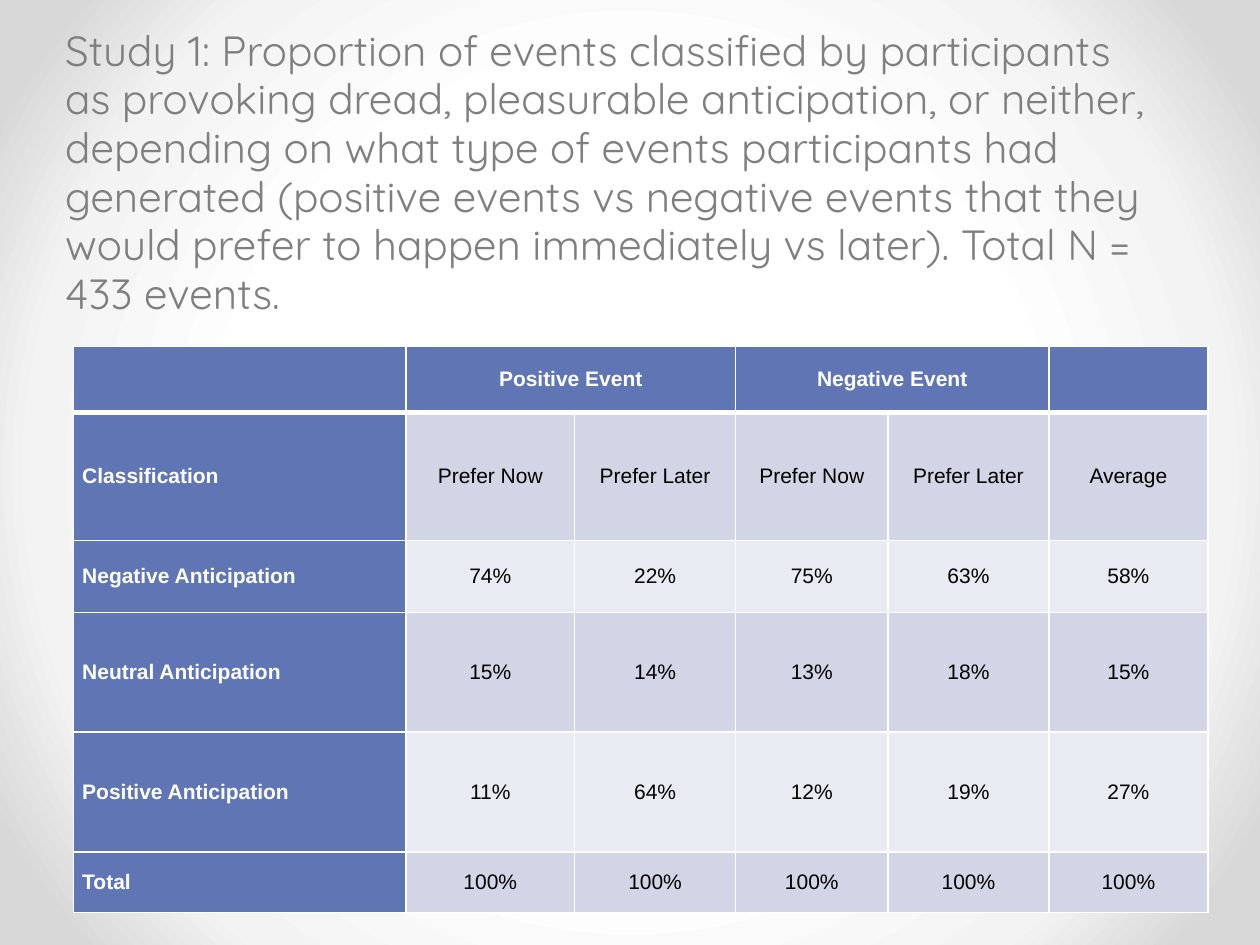
import pptx
import pptx.util
import pptx.dml.color
import pptx.enum.text
import pptx.oxml
import pptx.oxml.ns

Pt = pptx.util.Pt
Align = pptx.enum.text.PP_ALIGN
Anchor = pptx.enum.text.MSO_ANCHOR
SPACE = pptx.oxml.ns.nsdecls("a")

BLUE, DARK, LIGHT, WHITE = "6076B4", "D1D5E5", "E9EBF2", "FFFFFF"
STOPS = [(0, WHITE), (50, WHITE), (76, "F3F3F3"), (92, "D8D8D8"), (100, "D8D8D8")]
TITLE = (
    "Study 1: Proportion of events classified by participants as provoking dread, "
    "pleasurable anticipation, or neither, depending on what type of events "
    "participants had generated (positive events vs negative events that they would "
    "prefer to happen immediately vs later). Total N = 433 events."
)
ROWS = [
    ["", "Positive Event", "", "Negative Event", "", ""],
    ["Classification", "Prefer Now", "Prefer Later", "Prefer Now", "Prefer Later", "Average"],
    ["Negative Anticipation", "74%", "22%", "75%", "63%", "58%"],
    ["Neutral Anticipation", "15%", "14%", "13%", "18%", "15%"],
    ["Positive Anticipation", "11%", "64%", "12%", "19%", "27%"],
    ["Total"] + ["100%"] * 5,
]
WIDTHS = [190, 96.4, 92, 87.1, 92, 90.8]
HEIGHTS = [37.6, 73.4, 41, 68.4, 68.4, 34.6]


def color(code):
    return pptx.dml.color.RGBColor.from_string(code)


def style(par, font, size, code, bold=False):
    for run in par.runs:
        run.font.name = font
        run.font.size = Pt(size)
        run.font.bold = bold
        run.font.color.rgb = color(code)


def draw_back(slide):
    slide.background.fill.solid()
    props = slide.element.cSld.bg.bgPr
    stops = "".join(
        f'<a:gs pos="{spot * 1000}"><a:srgbClr val="{code}"/></a:gs>' for spot, code in STOPS
    )
    grad = pptx.oxml.parse_xml(
        f'<a:gradFill {SPACE} rotWithShape="1"><a:gsLst>{stops}</a:gsLst>'
        '<a:path path="circle"><a:fillToRect l="50000" t="50000" r="50000" b="50000"/>'
        "</a:path></a:gradFill>"
    )
    props.replace(props[0], grad)


def draw_title(slide, left, top, width, height):
    box = slide.shapes.add_textbox(Pt(left), Pt(top), Pt(width), Pt(height))
    frame = box.text_frame
    frame.word_wrap = True
    frame.text = TITLE
    par = frame.paragraphs[0]
    par.line_spacing = 0.96
    style(par, "Quicksand", 24.1, "7F7F7F")


def add_edges(cell, row):
    props = cell._tc.get_or_add_tcPr()
    thick = {"T": 3 if row == 1 else 1, "B": 3 if row == 0 else 1}
    for spot, side in enumerate("LRTB"):
        line = pptx.oxml.parse_xml(
            f'<a:ln{side} {SPACE} w="{Pt(thick.get(side, 1))}"><a:solidFill>'
            f'<a:srgbClr val="{WHITE}"/></a:solidFill></a:ln{side}>'
        )
        props.insert(spot, line)


def fill_cell(cell, text, row, col):
    head = row == 0 or col == 0
    cell.fill.solid()
    cell.fill.fore_color.rgb = color(BLUE if head else DARK if row % 2 else LIGHT)
    add_edges(cell, row)
    cell.vertical_anchor = Anchor.MIDDLE
    cell.margin_left = cell.margin_right = Pt(5)
    cell.margin_top = cell.margin_bottom = 0
    if text:
        cell.text_frame.text = text
        par = cell.text_frame.paragraphs[0]
        par.alignment = Align.CENTER if col else Align.LEFT
        style(par, "Arial", 12, WHITE if head else "000000", head)


def draw_table(slide, left, top):
    shape = slide.shapes.add_table(
        len(ROWS), len(WIDTHS), Pt(left), Pt(top), Pt(sum(WIDTHS)), Pt(sum(HEIGHTS))
    )
    table = shape.table
    for col, width in zip(table.columns, WIDTHS):
        col.width = Pt(width)
    for row, height in zip(table.rows, HEIGHTS):
        row.height = Pt(height)
    for row, texts in enumerate(ROWS):
        for col, text in enumerate(texts):
            fill_cell(table.cell(row, col), text, row, col)
    for col in (1, 3):
        table.cell(0, col).merge(table.cell(0, col + 1))


def main():
    deck = pptx.Presentation()
    deck.slide_width, deck.slide_height = Pt(720), Pt(540)
    slide = deck.slides.add_slide(deck.slide_layouts[6])
    draw_back(slide)
    draw_title(slide, 30.2, 12.2, 642.2, 185.8)
    draw_table(slide, 42, 198)
    deck.save("out.pptx")


if __name__ == "__main__":
    main()
